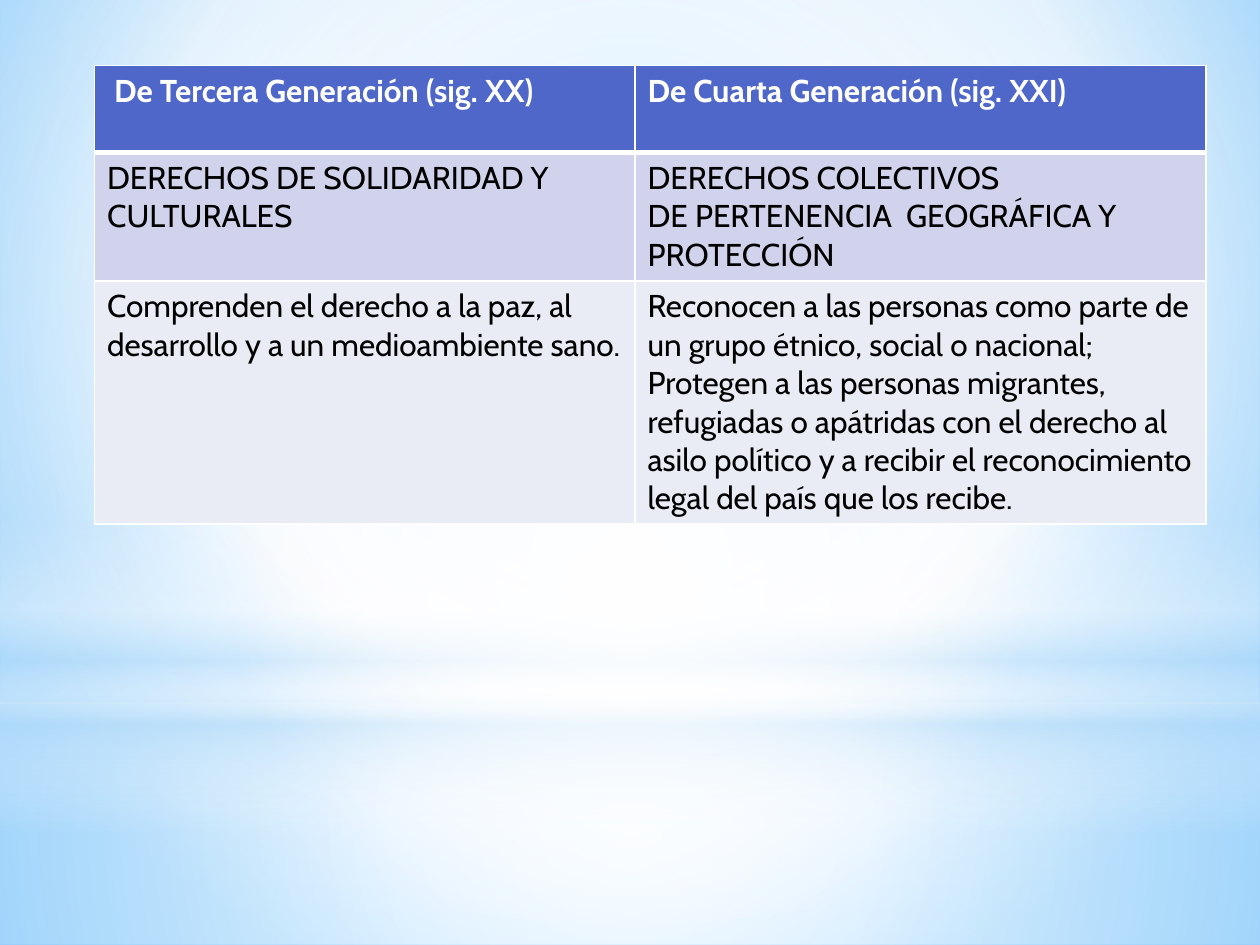
from lxml import etree
from pptx import Presentation
from pptx import util as u
from pptx.dml.color import RGBColor
from pptx.enum import shapes
from pptx.oxml.ns import qn

FONT = "Cabin"
WHITE, SKY = "FFFFFF", "B4DCFA"
CENTER = (50, 50, 50, 50)
ROWS = [
    # height, fill, text colour, bold, cells as lists of paragraphs
    (0.69, "4E67C8", WHITE, True, [
        [" De Tercera Generación (sig. XX)"],
        ["De Cuarta Generación (sig. XXI)"]]),
    (1.02, "D0D3EB", "000000", False, [
        ["DERECHOS DE SOLIDARIDAD Y CULTURALES"],
        ["DERECHOS COLECTIVOS", "DE PERTENENCIA  GEOGRÁFICA Y", "PROTECCIÓN"]]),
    (1.93, "E9EBF5", "000000", False, [
        ["Comprenden el derecho a la paz, al desarrollo y a un medioambiente sano."],
        ["Reconocen a las personas como parte de un grupo étnico, social o nacional;",
         "Protegen a las personas migrantes, refugiadas o apátridas con el derecho al "
         "asilo político y a recibir el reconocimiento legal del país que los recibe."]]),
]


def color(value):
    return RGBColor.from_string(value)


def add_node(parent, tag, **attributes):
    node = etree.SubElement(parent, qn(tag))
    for name, value in attributes.items():
        node.set(name, str(value))
    return node


def set_gradient(properties, stops, focus=None, angle=90):
    """Swap the solid fill for a gradient; stops are (position, colour, opacity)."""
    gradient = etree.Element(qn("a:gradFill"), rotWithShape="1")
    stop_list = add_node(gradient, "a:gsLst")
    for position, value, opacity in stops:
        stop = add_node(stop_list, "a:gs", pos=position * 1000)
        tint = add_node(stop, "a:srgbClr", val=value)
        if opacity < 100:
            add_node(tint, "a:alpha", val=opacity * 1000)
    if focus:
        circle = add_node(gradient, "a:path", path="circle")
        sides = {side: percent * 1000 for side, percent in zip("ltrb", focus)}
        add_node(circle, "a:fillToRect", **sides)
    else:
        add_node(gradient, "a:lin", ang=angle * 60000, scaled=0)
    properties.replace(properties.find(qn("a:solidFill")), gradient)


def add_glow(slide, kind, box, stops, focus=None):
    shape = slide.shapes.add_shape(kind, *map(u.Inches, box))
    shape.shadow.inherit = False
    shape.line.fill.background()
    shape.fill.solid()
    set_gradient(shape.element.spPr, stops, focus)


def add_backdrop(slide, width, height):
    slide.background.fill.solid()
    set_gradient(slide.element.find(".//" + qn("p:bgPr")),
                 [(0, "9ED5FF", 100), (60, WHITE, 100), (100, "5BB9FF", 100)],
                 (20, 10, 20, 60))
    rectangle, oval = shapes.MSO_SHAPE.RECTANGLE, shapes.MSO_SHAPE.OVAL
    horizon = 5.58
    # Floor and sky
    add_glow(slide, rectangle, (0, horizon, width, height - horizon),
             [(0, WHITE, 91), (37, WHITE, 76), (100, SKY, 79)], CENTER)
    add_glow(slide, rectangle, (0, 0, width, horizon),
             [(0, WHITE, 89), (48, WHITE, 62), (100, SKY, 79)], CENTER)
    # Horizon band
    add_glow(slide, rectangle, (0, 4.12, width, 2.5),
             [(0, WHITE, 0), (29, WHITE, 30), (45, SKY, 40),
              (55, WHITE, 26), (65, SKY, 60), (100, WHITE, 0)])
    # Central light
    add_glow(slide, oval, (0, 1.75, width, 5.58),
             [(0, WHITE, 100), (56, WHITE, 0)], CENTER)


def write_text(frame, paragraphs, size=18, fill="000000", bold=False):
    frame.word_wrap = True
    for index, content in enumerate(paragraphs):
        paragraph = frame.paragraphs[0] if index == 0 else frame.add_paragraph()
        run = paragraph.add_run()
        run.text = content
        run.font.name = FONT
        run.font.size = u.Pt(size)
        run.font.bold = bold
        run.font.color.rgb = color(fill)


def set_borders(cell, top=1, bottom=1):
    properties = cell._tc.get_or_add_tcPr()
    widths = {"a:lnL": 1, "a:lnR": 1, "a:lnT": top, "a:lnB": bottom}
    for index, (tag, width) in enumerate(widths.items()):
        line = etree.Element(qn(tag), w=str(u.Pt(width)))
        add_node(add_node(line, "a:solidFill"), "a:srgbClr", val=WHITE)
        properties.insert(index, line)


def add_rights_table(slide, left, top, column_widths):
    heights = [row[0] for row in ROWS]
    box = (left, top, sum(column_widths), sum(heights))
    table = slide.shapes.add_table(len(ROWS), len(column_widths), *map(u.Inches, box)).table
    for column, width in zip(table.columns, column_widths):
        column.width = u.Inches(width)
    for row_index, (height, fill, text_color, bold, contents) in enumerate(ROWS):
        table.rows[row_index].height = u.Inches(height)
        for column_index, paragraphs in enumerate(contents):
            cell = table.cell(row_index, column_index)
            cell.fill.solid()
            cell.fill.fore_color.rgb = color(fill)
            write_text(cell.text_frame, paragraphs, fill=text_color, bold=bold)
            # Heavy rule under the header row
            set_borders(cell, top=3 if row_index == 1 else 1,
                        bottom=3 if row_index == 0 else 1)


def main():
    width, height = 10, 7.5
    presentation = Presentation()
    presentation.slide_width = u.Inches(width)
    presentation.slide_height = u.Inches(height)
    slide = presentation.slides.add_slide(presentation.slide_layouts[6])
    add_backdrop(slide, width, height)
    add_rights_table(slide, 0.75, 0.52, (4.29, 4.53))
    presentation.save("out.pptx")


if __name__ == "__main__":
    main()
